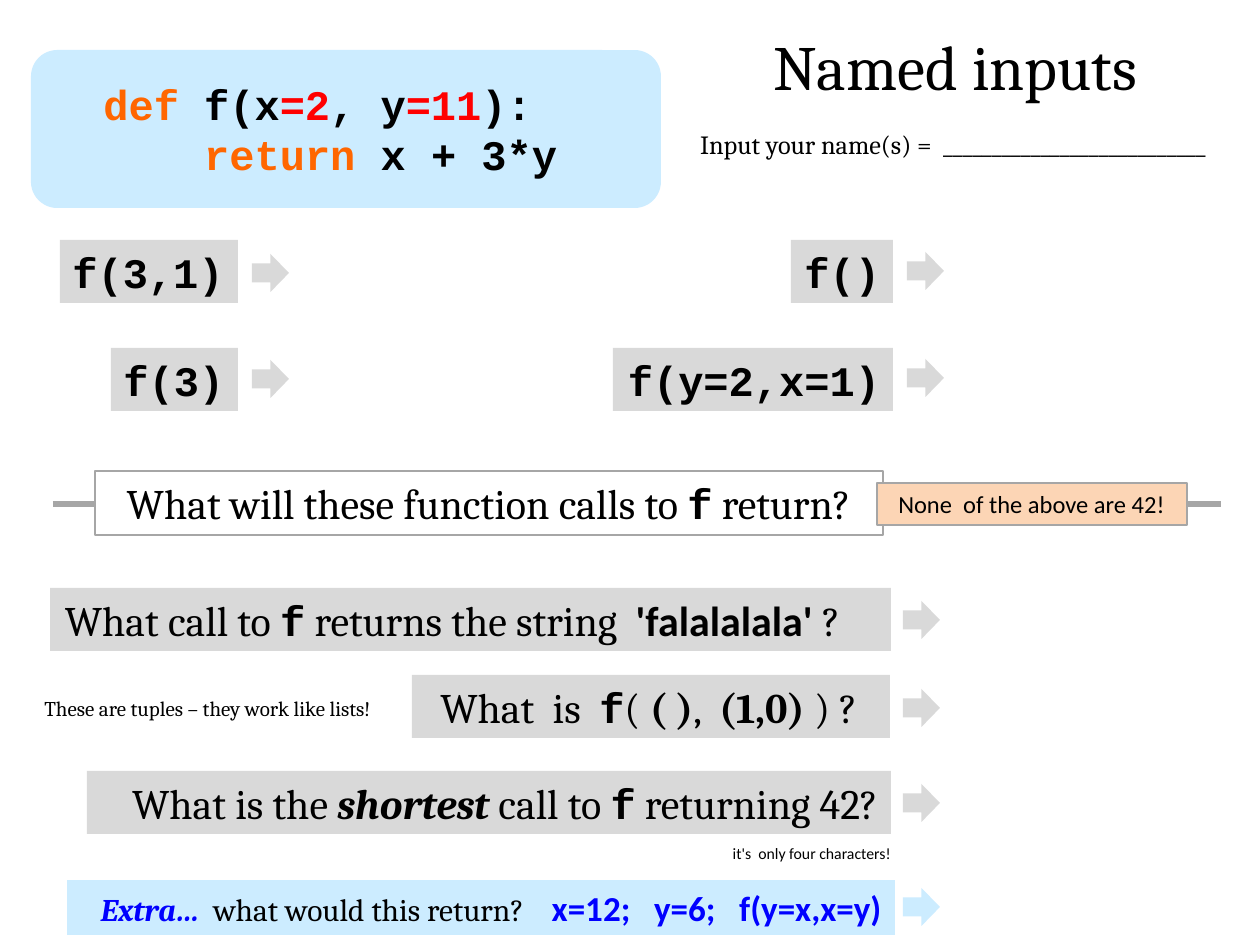
from lxml import etree
from pptx import Presentation
from pptx.dml.color import RGBColor
from pptx.enum.shapes import MSO_CONNECTOR as CONNECTOR, MSO_SHAPE as SHAPE
from pptx.enum.text import PP_ALIGN as ALIGN
from pptx.oxml.ns import qn
from pptx.util import Pt

PX = 914400 / 126
COLORS = {
    "black": "000000", "white": "FFFFFF", "gray": "D9D9D9", "rule": "A6A6A6",
    "sky": "CCECFF", "peach": "FCD5B5", "orange": "FF6600", "red": "FF0000",
    "blue": "0000FF",
}
SERIF, SANS, MONO = "Cambria", "Calibri", "Courier New"
LEFT, CENTER, RIGHT = ALIGN.LEFT, ALIGN.CENTER, ALIGN.RIGHT


def color(name):
    return RGBColor.from_string(COLORS[name])


def add_text(box, lines, size, align=LEFT, fill=None, border=None, wrap=True, right_inset=13):
    """Each line is a list of runs: (text, font, style letters, color, size), the last three optional."""
    shape = slide.shapes.add_textbox(*[round(v * PX) for v in box])
    if fill:
        shape.fill.solid()
        shape.fill.fore_color.rgb = color(fill)
    if border:
        shape.line.color.rgb = color(border)
        shape.line.width = Pt(0.75)
    frame = shape.text_frame
    frame.word_wrap = wrap
    frame.margin_right = round(right_inset * PX)
    for index, runs in enumerate(lines):
        paragraph = frame.add_paragraph() if index else frame.paragraphs[0]
        paragraph.alignment = align
        for text, font, *extra in runs:
            style, ink, run_size = extra + ["", "black", size][len(extra):]
            run = paragraph.add_run()
            run.text = text
            run.font.name = font
            run.font.size = Pt(run_size)
            run.font.bold = "b" in style
            run.font.italic = "i" in style
            run.font.color.rgb = color(ink)


presentation = Presentation()
presentation.slide_width = round(1260 * PX)
presentation.slide_height = round(945 * PX)
slide = presentation.slides.add_slide(presentation.slide_layouts[6])

# Function definition on a rounded panel
panel = slide.shapes.add_shape(SHAPE.ROUNDED_RECTANGLE, *[round(v * PX) for v in (31, 50, 630, 158)])
panel.shadow.inherit = False
panel.fill.solid()
panel.fill.fore_color.rgb = color("sky")
panel.line.fill.background()
add_text((91, 72, 508, 115), [
    [("def ", MONO, "b", "orange"), ("f(x", MONO, "b"), ("=2", MONO, "b", "red"),
     (", y", MONO, "b"), ("=11", MONO, "b", "red"), ("):", MONO, "b")],
    [("    ", MONO, "b"), ("return ", MONO, "b", "orange"), ("x + 3*y", MONO, "b")],
], 24, fill="sky", wrap=False)

# Title and name line
add_text((702, 21, 507, 89), [[("Named inputs", SERIF)]], 36, CENTER)
add_text((655, 122, 597, 44),
         [[("Input your name(s) =  ___________________________", SERIF)]], 15, CENTER)

# Function calls to evaluate
for call, left, top, width, align in [
    ("f(3,1)", 60, 240, 178, LEFT),
    ("f()", 791, 240, 102, RIGHT),
    ("f(3)", 111, 348, 127, LEFT),
    ("f(y=2,x=1)", 613, 348, 280, RIGHT),
]:
    add_text((left, top, width, 63), [[(call, MONO, "b")]], 24, align, "gray", wrap=False)

# Divider with its question and remark
divider = slide.shapes.add_connector(
    CONNECTOR.STRAIGHT, *[round(v * PX) for v in (53, 504, 1221, 504)])
divider.line.color.rgb = color("rule")
divider.line.width = Pt(3)
etree.SubElement(divider._element.spPr, qn("a:effectLst"))
add_text((95, 471, 788, 64), [[
    ("What will these function calls to ", SERIF), ("f", MONO, "b"), (" return?", SERIF),
]], 24, CENTER, "white", "rule")
add_text((877, 483, 310, 42), [[("None  of the above are 42!", SANS)]],
         14, CENTER, "peach", "rule")

# Written questions
add_text((50, 588, 841, 63), [[
    ("What call to ", SERIF), ("f", MONO, "b"), (" returns the string  ", SERIF),
    ("'falalalala' ", SANS, "b"), ("?", SERIF),
]], 24, RIGHT, "gray", right_inset=51)
add_text((412, 675, 478, 63), [[
    ("What  is  ", SERIF), ("f", MONO, "b"), ("( ", SERIF), ("( )", SERIF, "b"),
    (",  ", SERIF), ("(1,0)", SERIF, "b"), (" ) ?", SERIF),
]], 24, RIGHT, "gray", right_inset=33)
add_text((87, 771, 804, 63), [[
    ("What is the ", SERIF), ("shortest ", SERIF, "bi"), ("call to ", SERIF),
    ("f", MONO, "b"), (" returning 42?", SERIF),
]], 24, RIGHT, "gray", wrap=False)
add_text((67, 880, 828, 55), [[
    ("Extra…  ", SERIF, "bi", "blue"), ("what would this return?    ", SERIF),
    ("x=12;   y=6;   f(y=x,x=y)", SANS, "b", "blue", 20),
]], 18, RIGHT, "sky", wrap=False)

# Side notes
add_text((32, 689, 367, 38), [[("These are tuples – they work like lists!", SERIF)]], 12, wrap=False)
add_text((706, 838, 212, 31), [[("it's  only four characters!", SANS)]], 9, CENTER)

# Answer arrows
for left, top, fill in [
    (252, 254, "gray"), (252, 360, "gray"), (907, 252, "gray"), (907, 359, "gray"),
    (903, 601, "gray"), (903, 689, "gray"), (903, 784, "gray"), (903, 888, "sky"),
]:
    arrow = slide.shapes.add_shape(SHAPE.RIGHT_ARROW, *[round(v * PX) for v in (left, top, 37, 38)])
    arrow.shadow.inherit = False
    arrow.fill.solid()
    arrow.fill.fore_color.rgb = color(fill)
    arrow.line.fill.background()

presentation.save("out.pptx")
